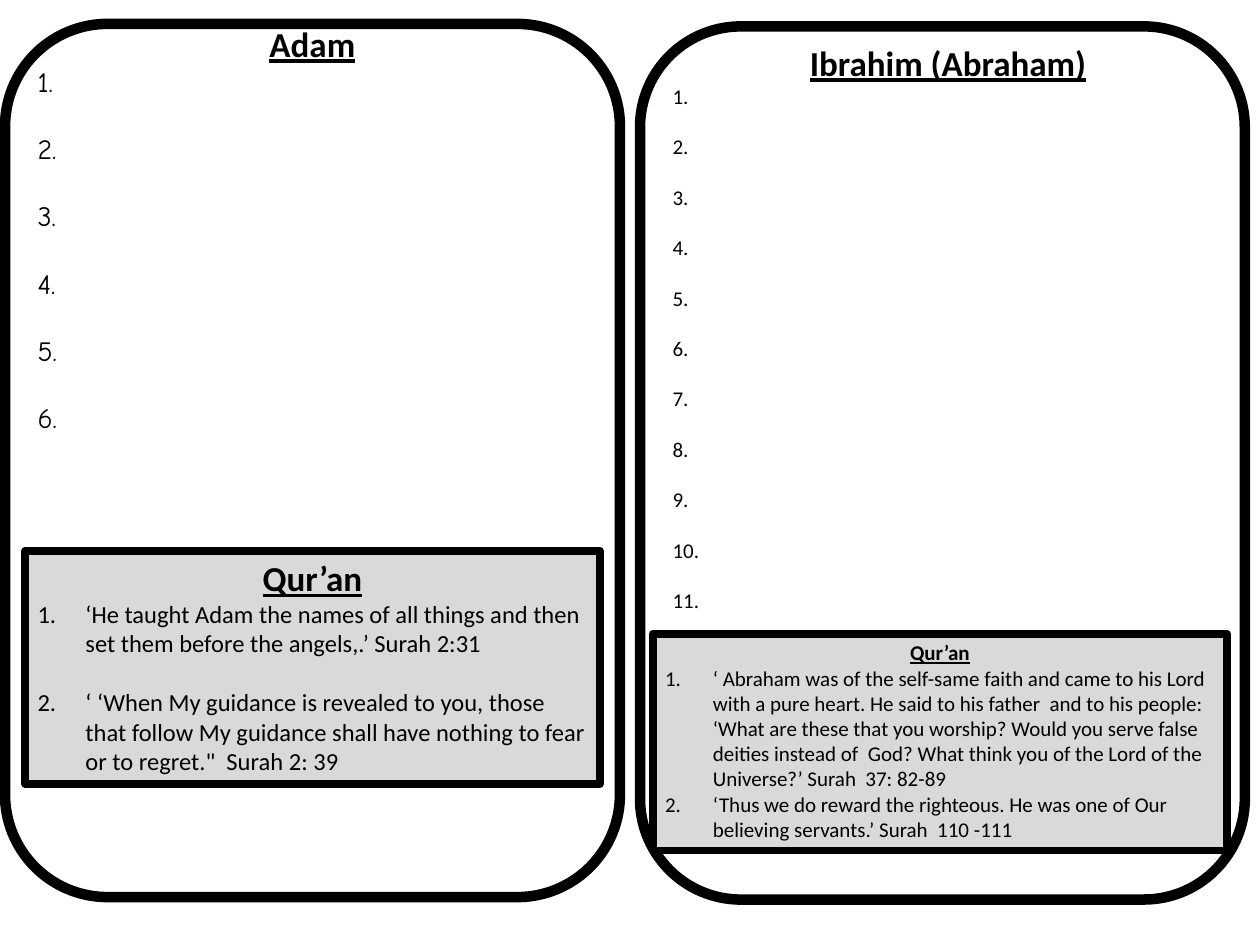
from lxml.etree import SubElement
from pptx import Presentation
from pptx.dml.color import RGBColor
from pptx.enum.shapes import MSO_SHAPE as Shape
from pptx.enum.text import MSO_ANCHOR as Anchor, MSO_AUTO_SIZE as AutoSize, PP_ALIGN as Align
from pptx.oxml.ns import qn
from pptx.util import Inches, Pt

BLACK, WHITE, GREY = "000000", "FFFFFF", "D9D9D9"
LINE_HEIGHT = 1.2


def colour(hex_text):
    return RGBColor.from_string(hex_text)


def add_panel(page, kind, left, top, width, height, fill, line_width):
    panel = page.shapes.add_shape(kind, Inches(left), Inches(top), Inches(width), Inches(height))
    panel.shadow.inherit = False
    panel.fill.solid()
    panel.fill.fore_color.rgb = colour(fill)
    panel.line.color.rgb = colour(BLACK)
    panel.line.width = Pt(line_width)
    return panel


def prepare_frame(box):
    frame = box.text_frame
    frame.word_wrap = True
    frame.auto_size = AutoSize.SHAPE_TO_FIT_TEXT
    frame.vertical_anchor = Anchor.TOP
    return frame


def write(para, text, size, font="Calibri", heading=False, gap=0):
    para.alignment = Align.CENTER if heading else Align.LEFT
    para.space_before = Pt(gap)
    span = para.add_run()
    span.text = text
    span.font.name = font
    span.font.size = Pt(size)
    span.font.bold = heading
    span.font.underline = heading
    span.font.color.rgb = colour(BLACK)


def number_paragraph(para):
    properties = para._p.get_or_add_pPr()
    properties.set("marL", str(Inches(0.38)))
    properties.set("indent", str(Inches(-0.38)))
    SubElement(properties, qn("a:buFont"), typeface="+mj-lt")
    SubElement(properties, qn("a:buAutoNum"), type="arabicPeriod")


def add_answer_list(page, left, top, width, height, name, count, size, font):
    box = page.shapes.add_textbox(Inches(left), Inches(top), Inches(width), Inches(height))
    frame = prepare_frame(box)
    write(frame.paragraphs[0], name, 20, heading=True)
    for number in range(1, count + 1):
        gap = size * LINE_HEIGHT if number > 1 else 0
        write(frame.add_paragraph(), f"{number}.", size, font=font, gap=gap)


def add_quotes(page, left, top, width, height, heading_size, size, spaced, quotes):
    box = add_panel(page, Shape.RECTANGLE, left, top, width, height, GREY, 4.5)
    frame = prepare_frame(box)
    write(frame.paragraphs[0], "Qur’an", heading_size, heading=True)
    for index, quote in enumerate(quotes):
        para = frame.add_paragraph()
        gap = size * LINE_HEIGHT if spaced and index else 0
        write(para, quote, size, gap=gap)
        number_paragraph(para)


def main():
    deck = Presentation()
    deck.slide_width, deck.slide_height = Inches(10), Inches(7.5)
    page = deck.slides.add_slide(deck.slide_layouts[6])

    add_panel(page, Shape.ROUNDED_RECTANGLE, 0.04, 0.19, 4.88, 6.93, WHITE, 6)
    add_panel(page, Shape.ROUNDED_RECTANGLE, 5.08, 0.21, 4.8, 6.93, WHITE, 6)
    add_answer_list(page, 0.2, 0.13, 4.56, 3.87, "Adam", 6, 16, "Comic Neue")
    add_answer_list(page, 5.24, 0.28, 4.57, 4.98, "Ibrahim (Abraham)", 11, 12, "Calibri")
    add_quotes(page, 0.2, 4.37, 4.56, 1.85, 20, 14, True, [
        "‘He taught Adam the names of all things and then set them before the angels,.’ Surah 2:31",
        "‘ ‘When My guidance is revealed to you, those that follow My guidance shall have "
        "nothing to fear or to regret.\"  Surah 2: 39",
    ])
    add_quotes(page, 5.18, 5.03, 4.56, 1.72, 12, 12, False, [
        "‘ Abraham was of the self-same faith and came to his Lord with a pure heart. "
        "He said to his father  and to his people: ‘What are these that you worship? "
        "Would you serve false deities instead of  God? What think you of the Lord of "
        "the Universe?’ Surah  37: 82-89",
        "‘Thus we do reward the righteous. He was one of Our believing servants.’ Surah  110 -111",
    ])
    deck.save("out.pptx")


if __name__ == "__main__":
    main()
